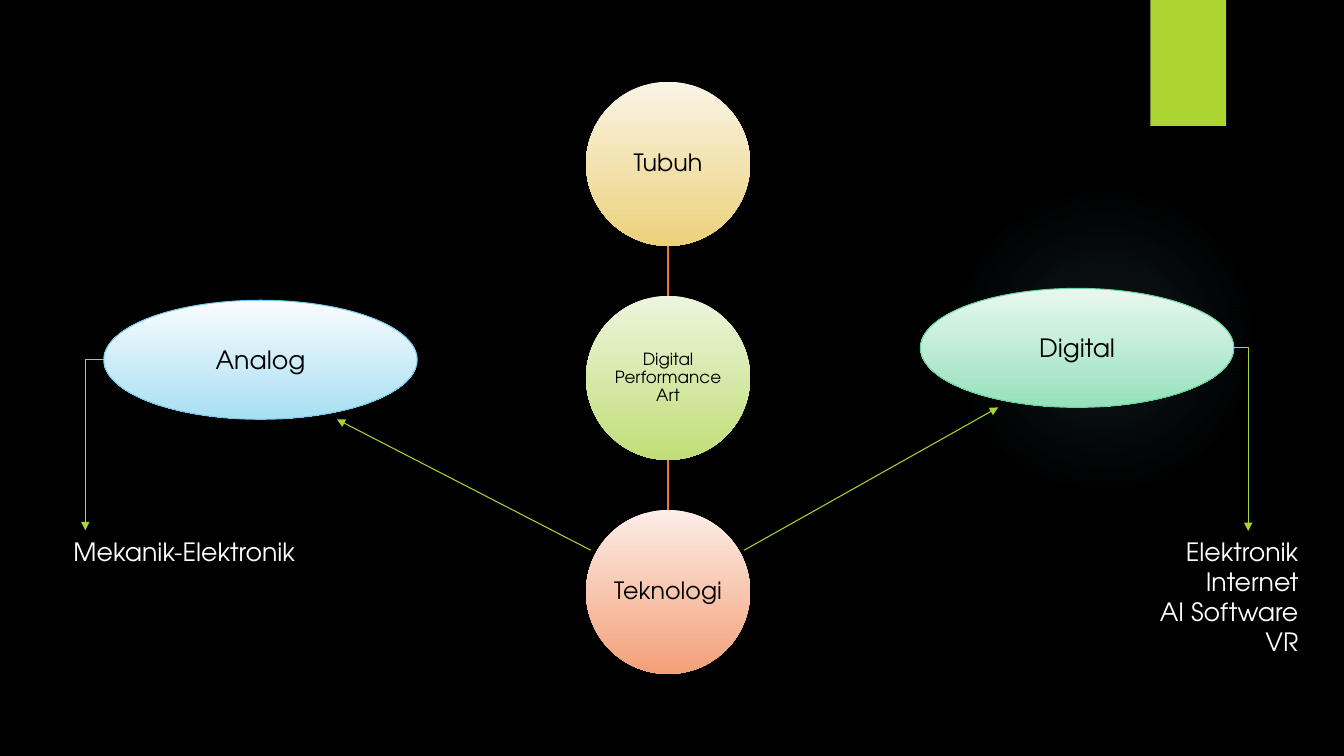
from lxml import etree
from pptx import Presentation
from pptx.dml.color import RGBColor
from pptx.enum import shapes, text
from pptx.oxml import ns, parse_xml
from pptx.util import Pt

FONT = "TeX Gyre Adventor"
BLACK = RGBColor(0x00, 0x00, 0x00)
WHITE = RGBColor(0xFF, 0xFF, 0xFF)
LIME = RGBColor(0xAC, 0xD4, 0x33)
ORANGE = RGBColor(0xEF, 0x7A, 0x24)
GLOW = RGBColor(0x7A, 0xC4, 0xF0)

# Content: label, size, top colour, bottom colour
CIRCLES = [
    ("Tubuh", 17, RGBColor(0xFA, 0xF4, 0xE5), RGBColor(0xEC, 0xD1, 0x7B)),
    ("Digital Performance Art", 12, RGBColor(0xED, 0xF5, 0xDD), RGBColor(0xC0, 0xDE, 0x78)),
    ("Teknologi", 17, RGBColor(0xFC, 0xED, 0xE7), RGBColor(0xF3, 0xA0, 0x78)),
]
# Label, left, top, top colour, bottom colour, outline
BRANCHES = [
    ("Analog", 74.1, 214.5, RGBColor(0xF9, 0xFC, 0xFE), RGBColor(0xA8, 0xDF, 0xF2),
     RGBColor(0x75, 0xCE, 0xEC)),
    ("Digital", 657.4, 206, RGBColor(0xE9, 0xF8, 0xF0), RGBColor(0x96, 0xE1, 0xBB),
     RGBColor(0x65, 0xD6, 0xA0)),
]
# Lines, left, alignment
EXAMPLES = [
    (["Mekanik-Elektronik"], 45.4, text.PP_ALIGN.LEFT),
    (["Elektronik", "Internet", "AI Software", "VR"], 753.1, text.PP_ALIGN.RIGHT),
]
# Start x, start y, end x, end y
ARROWS = [(422, 393, 240.6, 299.5), (531.6, 393, 713, 291)]
ELBOWS = [(74.1, 257, 61, 378.7), (881.4, 248.5, 891.6, 379.2)]
GLOW_STOPS = [(0, 7), (36, 6), (69, 0)]  # position and opacity, percent

# Layout
DIAMETER, PITCH, CIRCLE_TOP, CENTRE = 117.2, 152.9, 58.4, 477.2
BRANCH_WIDTH, BRANCH_HEIGHT = 223.9, 85
EXAMPLE_TOP, EXAMPLE_WIDTH, LINE_HEIGHT = 379.4, 181.4, 21.7

deck = Presentation()
deck.slide_width, deck.slide_height = Pt(960), Pt(540)
page = deck.slides.add_slide(deck.slide_layouts[6])
page.background.fill.solid()
page.background.fill.fore_color.rgb = BLACK


def write(frame, lines, size=18, color=BLACK, align=text.PP_ALIGN.CENTER,
          spacing=1.0, inset=None):
    frame.word_wrap = True
    if inset is not None:
        frame.margin_left = frame.margin_right = Pt(inset)
        frame.margin_top = frame.margin_bottom = Pt(inset)
    for index, line in enumerate(lines):
        para = frame.add_paragraph() if index else frame.paragraphs[0]
        para.alignment, para.line_spacing = align, spacing
        span = para.add_run()
        span.text = line
        span.font.name, span.font.size = FONT, Pt(size)
        span.font.color.rgb = color


def add_block(kind, left, top, width, height, colors, outline=None):
    block = page.shapes.add_shape(kind, Pt(left), Pt(top), Pt(width), Pt(height))
    block.shadow.inherit = False
    if len(colors) == 2:
        block.fill.gradient()
        block.fill.gradient_angle = 270
        for stop, position, color in zip(block.fill.gradient_stops, (0, 1), colors):
            stop.position, stop.color.rgb = position, color
    else:
        block.fill.solid()
        block.fill.fore_color.rgb = colors[0]
    if outline is None:
        block.line.fill.background()
    else:
        block.line.color.rgb, block.line.width = outline, Pt(0.75)
    block.text_frame.vertical_anchor = text.MSO_ANCHOR.MIDDLE
    return block


def add_line(ends, color=LIME, width=0.75, arrow=True, elbow=False):
    line = page.shapes.add_connector(shapes.MSO_CONNECTOR.STRAIGHT, *map(Pt, ends))
    line.line.color.rgb, line.line.width = color, Pt(width)
    properties = line._element.spPr
    if elbow:
        properties.find(ns.qn("a:prstGeom")).set("prst", "bentConnector2")
    if arrow:
        etree.SubElement(line.line._get_or_add_ln(), ns.qn("a:tailEnd"), type="triangle")
    etree.SubElement(properties, ns.qn("a:effectLst"))


# Soft glow and corner tab
glow = add_block(shapes.MSO_SHAPE.OVAL, 677.5, 131.8, 221.8, 221.8, [GLOW])
stops = "".join(
    f'<a:gs pos="{position * 1000}"><a:srgbClr val="{GLOW}">'
    f'<a:alpha val="{opacity * 1000}"/></a:srgbClr></a:gs>'
    for position, opacity in GLOW_STOPS)
solid = glow._element.spPr.find(ns.qn("a:solidFill"))
solid.getparent().replace(solid, parse_xml(
    f'<a:gradFill {ns.nsdecls("a")}><a:gsLst>{stops}</a:gsLst><a:path path="circle">'
    '<a:fillToRect l="50000" t="50000" r="50000" b="50000"/></a:path></a:gradFill>'))
add_block(shapes.MSO_SHAPE.RECTANGLE, 821.8, 0, 54, 90, [LIME])

# Column of linked circles
for index, (label, size, light, dark) in enumerate(CIRCLES):
    top = CIRCLE_TOP + index * PITCH
    if index:
        add_line((CENTRE, top - PITCH + DIAMETER, CENTRE, top), ORANGE, 1.5, arrow=False)
    circle = add_block(shapes.MSO_SHAPE.OVAL, CENTRE - DIAMETER / 2, top,
                       DIAMETER, DIAMETER, [light, dark])
    write(circle.text_frame, [label], size=size, spacing=0.9, inset=0.8)

# Branches
for ends in ARROWS:
    add_line(ends)
for label, left, top, light, dark, outline in BRANCHES:
    branch = add_block(shapes.MSO_SHAPE.OVAL, left, top, BRANCH_WIDTH, BRANCH_HEIGHT,
                       [light, dark], outline)
    write(branch.text_frame, [label])

# Examples of each branch
for ends in ELBOWS:
    add_line(ends, elbow=True)
for lines, left, align in EXAMPLES:
    box = page.shapes.add_textbox(Pt(left), Pt(EXAMPLE_TOP), Pt(EXAMPLE_WIDTH),
                                  Pt(len(lines) * LINE_HEIGHT + 7.2))
    write(box.text_frame, lines, color=WHITE, align=align)

deck.save("out.pptx")
